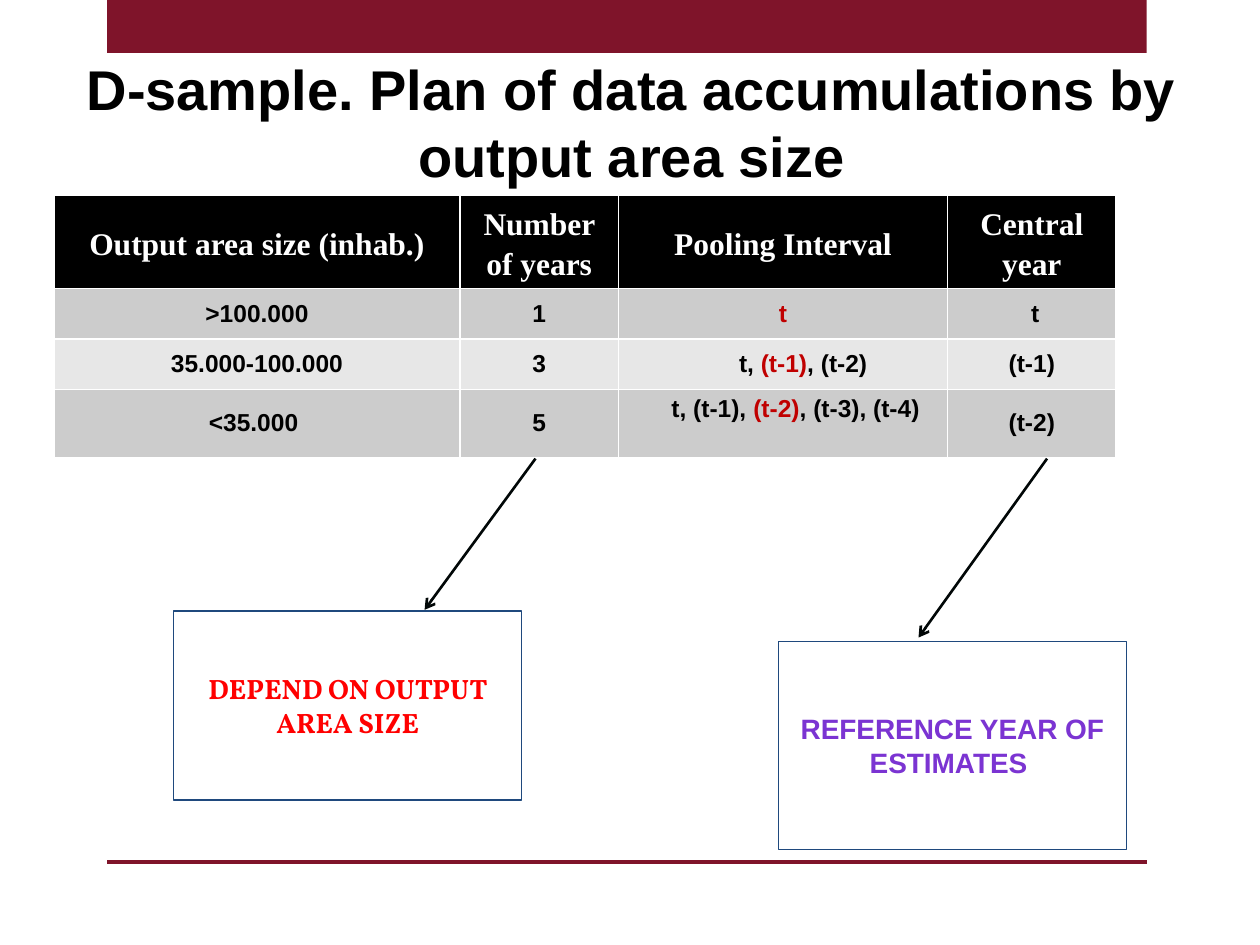
import pptx
import pptx.dml.color
import pptx.enum.shapes
import pptx.enum.text
import pptx.oxml
import pptx.oxml.ns
import pptx.util
from pptx.util import Inches

THEME = {
    "maroon": "7F142A", "black": "000000", "white": "FFFFFF", "accent": "C00000",
    "band": "CCCCCC", "light_band": "E7E7E7", "navy": "1F497D", "arrow": "010707",
    "red": "FF0000", "violet": "7B34D2",
    "sans": "Arial", "serif": "Times New Roman", "display": "Vollkorn",
    "title": 32, "header": 18, "note": 16, "body": 14,
}

TITLE = "D-sample. Plan of data accumulations by output area size"
HEADERS = ["Output area size (inhab.)", "Number of years", "Pooling Interval", "Central year"]
PLAN = [
    [[">100.000"], ["1"], ["", "t"], [" t"]],
    [["35.000-100.000"], ["3"], ["t, ", "(t-1)", ", (t-2)"], ["(t-1)"]],
    [["<35.000 "], ["5"], ["t, (t-1), ", "(t-2)", ", (t-3), (t-4)"], ["(t-2)"]],
]
COLUMN_WIDTHS = [3.22, 1.26, 2.61, 1.34]
ROW_HEIGHTS = [0.74, 0.4, 0.4, 0.54]
INTERVAL_INDENTS = [0.1, 0.42, 0.3]
NOTES = [
    ("DEPEND ON OUTPUT AREA SIZE", (1.38, 4.85, 2.76, 1.5), "display", "red"),
    ("REFERENCE YEAR OF ESTIMATES ", (6.18, 5.09, 2.76, 1.65), "sans", "violet"),
]
ARROWS = [((4.25, 3.64), (3.37, 4.84)), ((8.31, 3.64), (7.29, 5.06))]

ANCHOR = pptx.enum.text.MSO_ANCHOR
RECTANGLE = pptx.enum.shapes.MSO_SHAPE.RECTANGLE


def color(name):
    return pptx.dml.color.RGBColor.from_string(THEME[name])


def element(xml):
    return pptx.oxml.parse_xml(xml.replace(">", f" {pptx.oxml.ns.nsdecls('a')}>", 1))


def write(frame, runs, size, font, colors):
    paragraph = frame.paragraphs[0]
    paragraph.alignment = pptx.enum.text.PP_ALIGN.CENTER
    for text, color_name in zip(runs, colors):
        if text:
            run = paragraph.add_run()
            run.text = text
            run.font.size = pptx.util.Pt(THEME[size])
            run.font.name = THEME[font]
            run.font.bold = True
            run.font.color.rgb = color(color_name)
    return paragraph


def add_box(slide, place, fill=None, outline=None):
    box = slide.shapes.add_shape(RECTANGLE, *map(Inches, place))
    box.shadow.inherit = False
    if fill:
        box.fill.solid()
        box.fill.fore_color.rgb = color(fill)
    else:
        box.fill.background()
    if outline:
        box.line.color.rgb = color(outline)
        box.line.width = pptx.util.Pt(0.75)
    else:
        box.line.fill.background()
    return box


def add_line(slide, start, end, color_name, width, arrow=False):
    line = slide.shapes.add_connector(
        pptx.enum.shapes.MSO_CONNECTOR.STRAIGHT, *map(Inches, start + end))
    line.line.color.rgb = color(color_name)
    line.line.width = pptx.util.Pt(width)
    if arrow:
        line.line._get_or_add_ln().append(element('<a:tailEnd type="arrow"></a:tailEnd>'))
    line._element.spPr.append(element("<a:effectLst></a:effectLst>"))


def style_cell(cell, fill):
    cell.vertical_anchor = ANCHOR.MIDDLE
    properties = cell._tc.get_or_add_tcPr()
    for side in "LRTB":
        properties.append(element(
            f'<a:ln{side} w="12700"><a:solidFill><a:srgbClr val="{THEME["white"]}"/>'
            f"</a:solidFill></a:ln{side}>"))
    cell.fill.solid()
    cell.fill.fore_color.rgb = color(fill)


def add_plan(slide):
    plan = slide.shapes.add_table(
        len(PLAN) + 1, len(HEADERS), Inches(0.43), Inches(1.55),
        Inches(sum(COLUMN_WIDTHS)), Inches(sum(ROW_HEIGHTS))).table
    for column, width in zip(plan.columns, COLUMN_WIDTHS):
        column.width = Inches(width)
    for row, height in zip(plan.rows, ROW_HEIGHTS):
        row.height = Inches(height)
    for c, header in enumerate(HEADERS):
        cell = plan.cell(0, c)
        style_cell(cell, "black")
        write(cell.text_frame, [header], "header", "serif", ["white"]).line_spacing = 1.15
    central_year = plan.cell(0, 3)
    central_year.margin_left = central_year.margin_right = 0
    central_year.margin_top = central_year.margin_bottom = 0
    for r, record in enumerate(PLAN, 1):
        for c, runs in enumerate(record):
            cell = plan.cell(r, c)
            style_cell(cell, "band" if r % 2 else "light_band")
            write(cell.text_frame, runs, "body", "sans", ["black", "accent", "black"])
        plan.cell(r, 2).margin_left = Inches(INTERVAL_INDENTS[r - 1])
    plan.cell(3, 2).vertical_anchor = ANCHOR.TOP


def main():
    deck = pptx.Presentation()
    deck.slide_width, deck.slide_height = Inches(10), Inches(7.5)
    slide = deck.slides.add_slide(deck.slide_layouts[5])

    add_box(slide, (0.85, 0, 8.25, 0.42), fill="maroon")
    add_line(slide, (0.85, 6.84), (9.1, 6.84), "maroon", 2)

    title = slide.shapes.title
    title.left, title.top, title.width, title.height = map(Inches, (0.03, 0.44, 9.97, 1.11))
    title.text_frame.vertical_anchor = ANCHOR.BOTTOM
    title.text_frame.auto_size = pptx.enum.text.MSO_AUTO_SIZE.NONE
    write(title.text_frame, [TITLE], "title", "sans", ["black"])

    add_plan(slide)
    for text, place, font, text_color in NOTES:
        note = add_box(slide, place, outline="navy").text_frame
        note.word_wrap = True
        note.vertical_anchor = ANCHOR.MIDDLE
        write(note, [text], "note", font, [text_color])
    for start, end in ARROWS:
        add_line(slide, start, end, "arrow", 1.5, arrow=True)

    deck.save("out.pptx")


if __name__ == "__main__":
    main()
